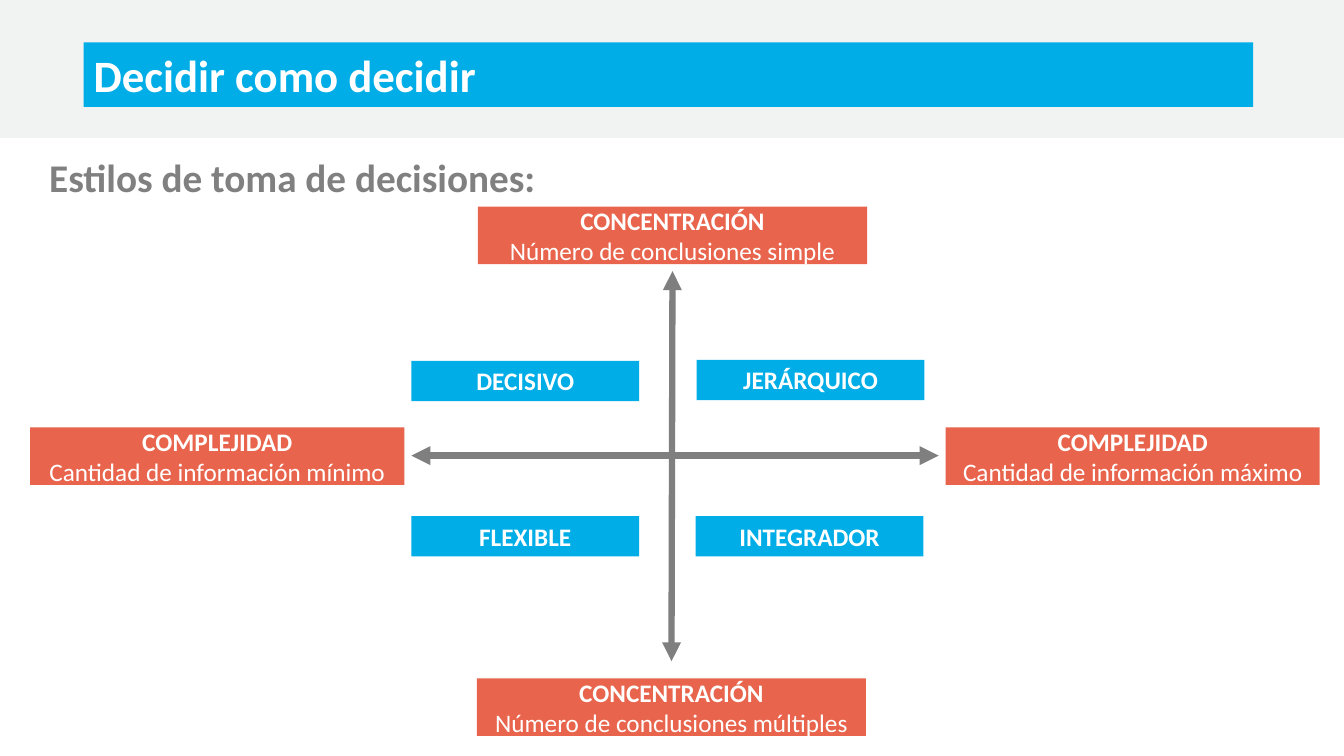
from typing import NamedTuple

from lxml import etree
from pptx import Presentation
from pptx.dml.color import RGBColor
from pptx.enum.shapes import MSO_CONNECTOR, MSO_SHAPE
from pptx.enum.text import MSO_ANCHOR, MSO_AUTO_SIZE, PP_ALIGN
from pptx.oxml.ns import qn
from pptx.util import Emu, Pt

RECT = MSO_SHAPE.RECTANGLE
STRAIGHT = MSO_CONNECTOR.STRAIGHT
TOP, MIDDLE = MSO_ANCHOR.TOP, MSO_ANCHOR.MIDDLE
LEFT, CENTER, JUSTIFY = PP_ALIGN.LEFT, PP_ALIGN.CENTER, PP_ALIGN.JUSTIFY
GROW, FIXED = MSO_AUTO_SIZE.SHAPE_TO_FIT_TEXT, MSO_AUTO_SIZE.NONE

EMU_PER_PX = 9144  # 100 px to the inch
FONT = "Calibri"
COLORS = {
    "band": "F1F3F2",
    "blue": "00ADE6",
    "coral": "E9644C",
    "heading": "808080",
    "arrow": "7F7F7F",
    "white": "FFFFFF",
}


class Style(NamedTuple):
    left: int
    top: int
    text: str


class Pole(NamedTuple):
    left: int
    top: int
    width: int
    name: str
    detail: str


class Axis(NamedTuple):
    x1: int
    y1: int
    x2: int
    y2: int


STYLES = [
    Style(408, 358, "DECISIVO"),
    Style(408, 512, "FLEXIBLE"),
    Style(691, 357, "JERÁRQUICO"),
    Style(690, 512, "INTEGRADOR"),
]
POLES = [
    Pole(474, 205, 386, "CONCENTRACIÓN", "Número de conclusiones simple"),
    Pole(30, 424, 371, "COMPLEJIDAD", "Cantidad de información mínimo"),
    Pole(473, 673, 386, "CONCENTRACIÓN", "Número de conclusiones múltiples"),
    Pole(938, 424, 371, "COMPLEJIDAD", "Cantidad de información máximo"),
]
AXES = [Axis(667, 269, 666, 656), Axis(931, 452, 408, 452)]


def px(n: int) -> Emu:
    return Emu(n * EMU_PER_PX)


def rgb(name: str) -> RGBColor:
    return RGBColor.from_string(COLORS[name])


def add_rect(s, left: int, top: int, width: int, height: int, fill: str):
    sp = s.shapes.add_shape(RECT, px(left), px(top), px(width), px(height))
    sp.shadow.inherit = False
    sp.fill.solid()
    sp.fill.fore_color.rgb = rgb(fill)
    sp.line.fill.background()
    return sp


def write(sp, *lines: str, size: int = 18, color: str = "white",
          align=CENTER, anchor=TOP, fit=GROW, spacing=None) -> None:
    """Write one paragraph per line; only the first line is bold."""
    tf = sp.text_frame
    tf.word_wrap = True
    tf.auto_size = fit
    tf.vertical_anchor = anchor
    for i, text in enumerate(lines):
        p = tf.paragraphs[0] if i == 0 else tf.add_paragraph()
        p.alignment = align
        p.line_spacing = spacing
        r = p.add_run()
        r.text = text
        r.font.name = FONT
        r.font.size = Pt(size)
        r.font.bold = i == 0
        r.font.color.rgb = rgb(color)


def add_axis(s, axis: Axis) -> None:
    c = s.shapes.add_connector(STRAIGHT, *(px(n) for n in axis))
    c.line.color.rgb = rgb("arrow")
    c.line.width = Pt(4.5)
    ln = c.line._get_or_add_ln()
    for end in ("a:headEnd", "a:tailEnd"):
        etree.SubElement(ln, qn(end)).set("type", "triangle")
    etree.SubElement(c._element.spPr, qn("a:effectLst"))


def main() -> None:
    prs = Presentation()
    prs.slide_width, prs.slide_height = px(1333), px(750)
    s = prs.slides.add_slide(prs.slide_layouts[6])

    # Header band and title
    band = add_rect(s, 0, 0, 1333, 136, "band")
    band.line.color.rgb = rgb("band")
    band.line.width = Pt(1)
    title = add_rect(s, 83, 42, 1160, 64, "blue")
    write(title, "Decidir como decidir", size=32, align=JUSTIFY)

    # Heading
    heading = s.shapes.add_textbox(px(39), px(139), px(1247), px(76))
    write(heading, "Estilos de toma de decisiones:", size=28, color="heading",
          align=LEFT, anchor=MIDDLE, fit=FIXED, spacing=Pt(32))

    # Decision styles, one per quadrant
    for style in STYLES:
        write(add_rect(s, style.left, style.top, 226, 40, "blue"), style.text)

    # Axes and their poles
    for axis in AXES:
        add_axis(s, axis)
    for pole in POLES:
        sp = add_rect(s, pole.left, pole.top, pole.width, 57, "coral")
        write(sp, pole.name, pole.detail, anchor=MIDDLE, fit=FIXED)

    prs.save("out.pptx")


if __name__ == "__main__":
    main()
